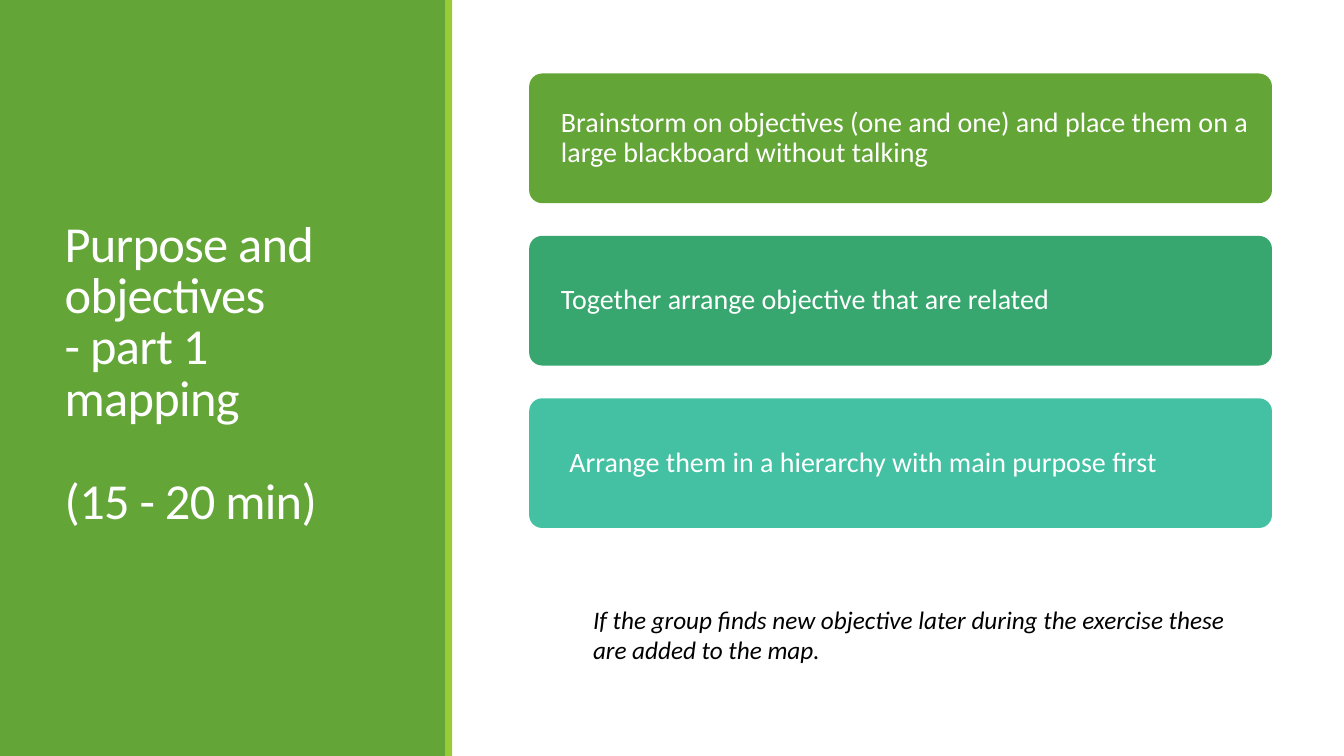
from dataclasses import dataclass

from pptx import Presentation
from pptx.dml.color import RGBColor
from pptx.enum.shapes import MSO_SHAPE as Preset
from pptx.enum.text import MSO_ANCHOR as Anchor, MSO_AUTO_SIZE as AutoSize, PP_ALIGN as Align
from pptx.util import Pt


@dataclass(frozen=True)
class Theme:
    font: str = "Calibri"
    white: str = "FFFFFF"
    black: str = "000000"
    green: str = "63A537"
    lime: str = "99CB38"
    emerald: str = "37A76F"
    turquoise: str = "44C1A3"
    title_size: int = 36
    step_size: int = 20
    note_size: int = 18


theme = Theme()


def add_block(preset, left, top, width, height, color):
    shape = slide.shapes.add_shape(preset, Pt(left), Pt(top), Pt(width), Pt(height))
    shape.shadow.inherit = False
    shape.fill.solid()
    shape.fill.fore_color.rgb = RGBColor.from_string(color)
    shape.line.fill.background()
    return shape


def write(shape, text, size, color=theme.white, line_spacing=1.0, italic=False,
          anchor=Anchor.MIDDLE, tracking=0):
    """Fill the shape with one paragraph per line; tracking is in hundredths of a point."""
    frame = shape.text_frame
    frame.text = text
    frame.word_wrap = True
    frame.auto_size = AutoSize.NONE
    frame.vertical_anchor = anchor
    for paragraph in frame.paragraphs:
        paragraph.alignment = Align.LEFT
        paragraph.line_spacing = line_spacing
        font = paragraph.runs[0].font
        font.name, font.size, font.italic = theme.font, Pt(size), italic
        font.color.rgb = RGBColor.from_string(color)
        if tracking:
            paragraph.runs[0]._r.get_or_add_rPr().set("spc", str(tracking))
    return frame


presentation = Presentation()
presentation.slide_width, presentation.slide_height = Pt(960), Pt(540)
slide = presentation.slides.add_slide(presentation.slide_layouts[5])

# Side panel with the title
add_block(Preset.RECTANGLE, 0, 0, 319, 540, theme.green)
add_block(Preset.RECTANGLE, 318, 0, 5, 540, theme.lime)

title = slide.shapes.title
title.left, title.top, title.width, title.height = Pt(39), Pt(41), Pt(243), Pt(454)
slide.shapes._spTree.append(title._element)  # bring the title in front of the panel
title_frame = write(title, "Purpose and objectives\n- part 1 mapping\n(15 - 20 min)",
                    theme.title_size, line_spacing=0.85, tracking=-50)
title_frame.paragraphs[-1].space_before = Pt(36.6)

# Steps: text, colour, left inset
steps = [
    ("Brainstorm on objectives (one and one) and place them on a large blackboard "
     "without talking", theme.green, 20),
    ("Together arrange objective that are related", theme.emerald, 20),
    ("Arrange them in a hierarchy with main purpose first", theme.turquoise, 26),
]
first_top, step_height, step_pitch = 52.5, 92.6, 116
for index, (text, color, inset) in enumerate(steps):
    step = add_block(Preset.ROUNDED_RECTANGLE, 378, first_top + index * step_pitch,
                     530.6, step_height, color)
    step.adjustments[0] = 0.1
    step_frame = write(step, text, theme.step_size, line_spacing=0.9)
    step_frame.margin_left, step_frame.margin_right = Pt(inset), Pt(7.5)

note = slide.shapes.add_textbox(Pt(416.5), Pt(428), Pt(480), Pt(51))
write(note, "If the group finds new objective later during the exercise these are added to the map.",
      theme.note_size, color=theme.black, italic=True, anchor=Anchor.TOP)

presentation.save("out.pptx")
